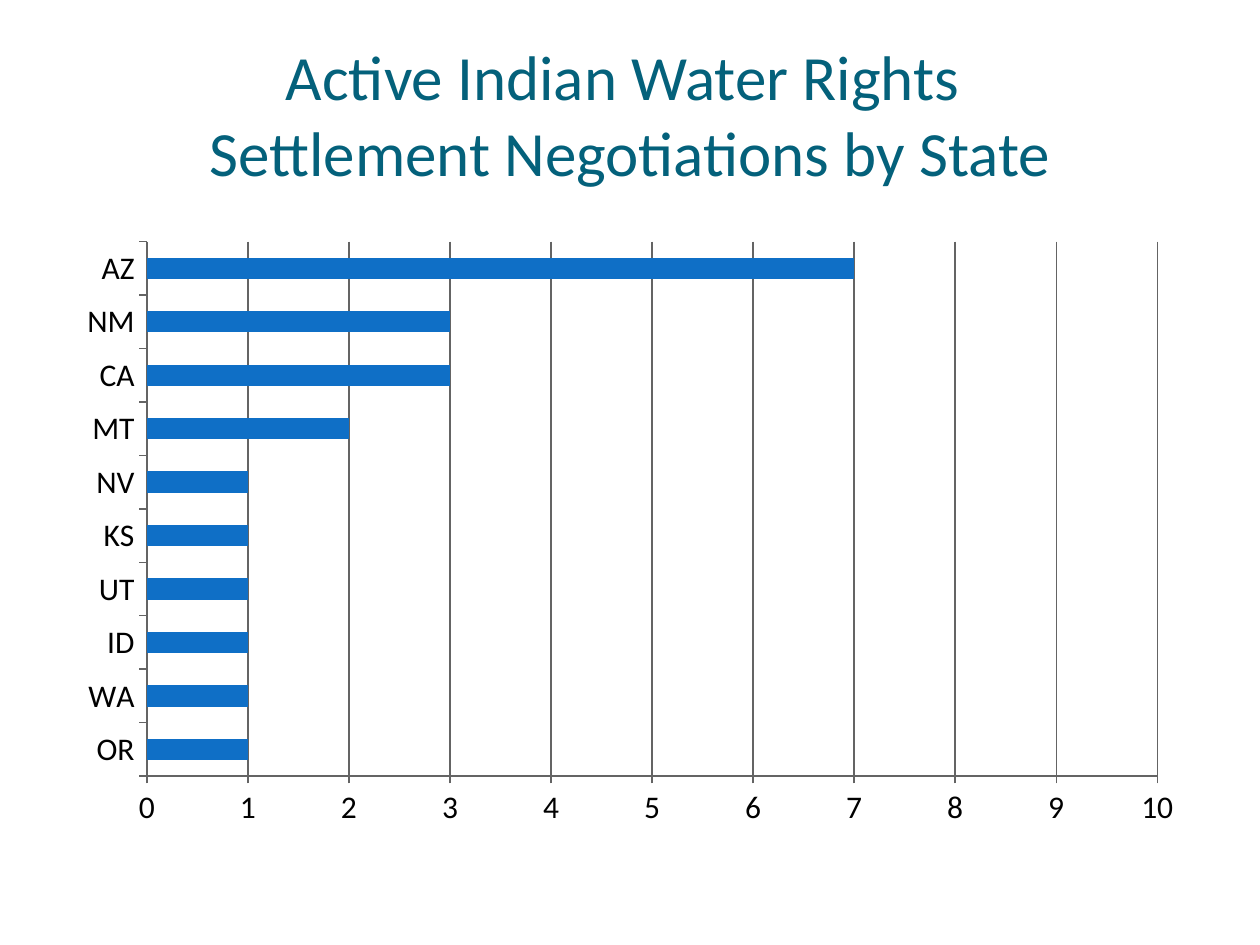
from pptx import Presentation
from pptx.chart.data import CategoryChartData
from pptx.dml.color import RGBColor
from pptx.enum.chart import XL_CHART_TYPE, XL_TICK_MARK
from pptx.enum.text import MSO_ANCHOR, PP_ALIGN
from pptx.oxml import parse_xml
from pptx.oxml.ns import nsdecls
from pptx.util import Pt

COLORS = {"title": "04617B", "bar": "0F6FC6", "text": "000000", "line": "646464"}
FONT = "Calibri"
TITLE = ["Active Indian Water Rights ", "Settlement Negotiations by State"]
# States from the bottom bar to the top one
STATES = {"OR": 1, "WA": 1, "ID": 1, "UT": 1, "KS": 1,
          "NV": 1, "MT": 2, "CA": 3, "NM": 3, "AZ": 7}
PLOT = {"x": 0.074, "y": 0.034, "w": 0.891, "h": 0.857}


def color(name):
    return RGBColor.from_string(COLORS[name])


def style(font, size, name):
    font.name = FONT
    font.size = Pt(size)
    font.color.rgb = color(name)


def draw_line(form):
    form.line.color.rgb = color("line")
    form.line.width = Pt(0.75)


def add_title(slide, left, top, width, height):
    box = slide.shapes.add_textbox(Pt(left), Pt(top), Pt(width), Pt(height))
    frame = box.text_frame
    frame.word_wrap = True
    frame.vertical_anchor = MSO_ANCHOR.BOTTOM
    frame.margin_left = frame.margin_right = frame.margin_bottom = 0
    frame.margin_top = Pt(3.6)
    para = frame.paragraphs[0]
    para.text = "\v".join(TITLE)
    para.alignment = PP_ALIGN.CENTER
    style(para.font, 36, "title")


def place_plot(chart):
    # Fix the inner plot area as fractions of the chart
    modes = "".join(f'<c:{key}Mode val="edge"/>' for key in "xy")
    sizes = "".join(f'<c:{key} val="{val}"/>' for key, val in PLOT.items())
    layout = parse_xml(
        f'<c:layout {nsdecls("c")}><c:manualLayout>'
        f'<c:layoutTarget val="inner"/>{modes}{sizes}'
        f'</c:manualLayout></c:layout>')
    area = chart.element.chart.plotArea
    for old in area.findall(layout.tag):
        area.remove(old)
    area.insert(0, layout)


def add_bars(slide, left, top, width, height):
    data = CategoryChartData()
    data.categories = list(STATES)
    data.add_series("Series 1", list(STATES.values()))
    chart = slide.shapes.add_chart(
        XL_CHART_TYPE.BAR_CLUSTERED,
        Pt(left), Pt(top), Pt(width), Pt(height), data).chart
    chart.has_legend = False
    chart.has_title = False
    style(chart.font, 18, "text")
    place_plot(chart)

    # Bars
    plot = chart.plots[0]
    plot.gap_width = 150
    plot.vary_by_categories = False
    fill = plot.series[0].format.fill
    fill.solid()
    fill.fore_color.rgb = color("bar")

    # Axes
    for axis in (chart.category_axis, chart.value_axis):
        axis.major_tick_mark = XL_TICK_MARK.OUTSIDE
        axis.minor_tick_mark = XL_TICK_MARK.NONE
        draw_line(axis.format)
    chart.category_axis.has_major_gridlines = False
    scale = chart.value_axis
    scale.minimum_scale = 0
    scale.maximum_scale = 10
    scale.major_unit = 1
    scale.has_major_gridlines = True
    draw_line(scale.major_gridlines.format)
    scale.tick_labels.number_format = "#,##0"
    scale.tick_labels.number_format_is_linked = False


def main():
    deck = Presentation()
    deck.slide_width, deck.slide_height = Pt(720), Pt(540)
    slide = deck.slides.add_slide(deck.slide_layouts[6])
    add_title(slide, 36, 18, 648, 90)
    add_bars(slide, 36, 126, 648, 356.4)
    deck.save("out.pptx")


if __name__ == "__main__":
    main()
